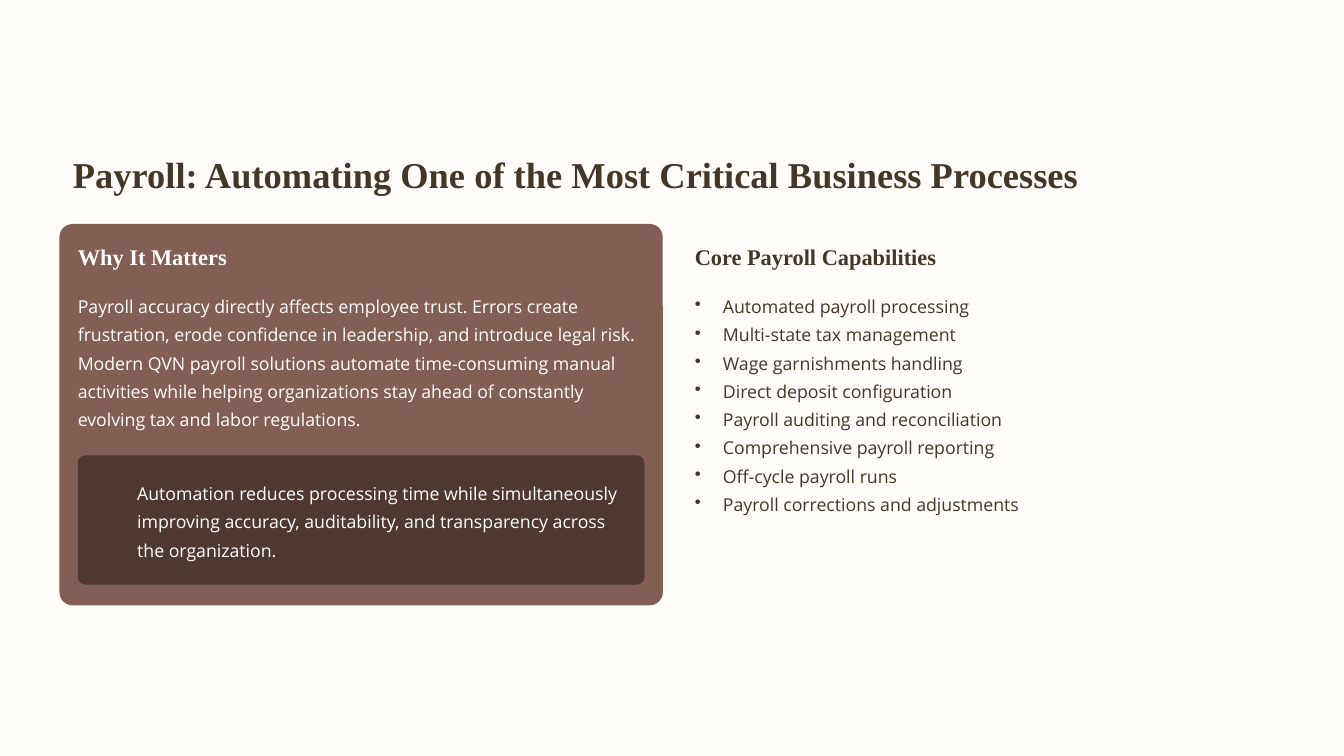
"""Build the payroll automation slide."""
import pptx
import pptx.dml.color
import pptx.enum.shapes
import pptx.enum.text
import pptx.oxml.ns
import pptx.util
from lxml import etree

Pt = pptx.util.Pt

TITLE = "Payroll: Automating One of the Most Critical Business Processes"
REASON_HEADING = "Why It Matters"
REASON = (
    "Payroll accuracy directly affects employee trust. Errors create frustration, "
    "erode confidence in leadership, and introduce legal risk. Modern QVN payroll "
    "solutions automate time-consuming manual activities while helping organizations "
    "stay ahead of constantly evolving tax and labor regulations."
)
CALLOUT = (
    "Automation reduces processing time while simultaneously improving accuracy, "
    "auditability, and transparency across the organization."
)
CAPABILITIES_HEADING = "Core Payroll Capabilities"
CAPABILITIES = [
    "Automated payroll processing",
    "Multi-state tax management",
    "Wage garnishments handling",
    "Direct deposit configuration",
    "Payroll auditing and reconciliation",
    "Comprehensive payroll reporting",
    "Off-cycle payroll runs",
    "Payroll corrections and adjustments",
]

THEME = {
    "background": "FFFCFA",
    "card": "835E54",
    "callout": "4E3832",
    "dark": "443728",
    "light": "FFFFFF",
    "title": {"name": "Times New Roman", "size": Pt(19.5), "bold": True},
    "heading": {"name": "Times New Roman", "size": Pt(12), "bold": True},
    "body": {"name": "Open Sans", "size": Pt(9.5), "bold": False},
    "spacing": {"title": 1.04, "heading": 1.04, "body": 1.33},
}

SLIDE_WIDTH, SLIDE_HEIGHT = 720, 405
CARD = (31.9, 120, 323.2, 204.3)
PADDING = 9.8
CALLOUT_INDENT = 31.8
CALLOUT_TOP, CALLOUT_HEIGHT = 243.9, 69.3
HEADING_TOP, HEADING_HEIGHT = 129.8, 15.2
BODY_TOP = 154.8
RIGHT_LEFT, RIGHT_WIDTH = 372.2, 309
BULLET_INDENT = 15.1


def rgb(name):
    return pptx.dml.color.RGBColor.from_string(THEME[name])


def place(shape, box):
    for side, length in zip(("left", "top", "width", "height"), box):
        setattr(shape, side, Pt(length))


def add_bullet(paragraph):
    properties = paragraph._p.get_or_add_pPr()
    properties.set("marL", str(Pt(BULLET_INDENT)))
    properties.set("indent", str(-Pt(BULLET_INDENT)))
    bullet = etree.SubElement(properties, pptx.oxml.ns.qn("a:buChar"))
    bullet.set("char", "•")


def write(shape, lines, style, color, bulleted=False):
    frame = shape.text_frame
    frame_format = {
        "margin_left": 0, "margin_top": 0, "margin_right": 0, "margin_bottom": 0,
        "word_wrap": True,
        "auto_size": pptx.enum.text.MSO_AUTO_SIZE.NONE,
        "vertical_anchor": pptx.enum.text.MSO_ANCHOR.TOP,
    }
    for name, value in frame_format.items():
        setattr(frame, name, value)
    for index, line in enumerate(lines):
        paragraph = frame.add_paragraph() if index else frame.paragraphs[0]
        paragraph.text = line
        paragraph.alignment = pptx.enum.text.PP_ALIGN.LEFT
        paragraph.line_spacing = THEME["spacing"][style]
        if bulleted:
            add_bullet(paragraph)
        for name, value in THEME[style].items():
            setattr(paragraph.font, name, value)
        paragraph.font.color.rgb = rgb(color)


def add_text(slide, box, *text_format, **options):
    shape = slide.shapes.add_textbox(*map(Pt, box))
    write(shape, *text_format, **options)


def add_panel(slide, box, color, rounding):
    kind = pptx.enum.shapes.MSO_SHAPE.ROUNDED_RECTANGLE
    shape = slide.shapes.add_shape(kind, *map(Pt, box))
    shape.adjustments[0] = rounding
    shape.shadow.inherit = False
    shape.fill.solid()
    shape.fill.fore_color.rgb = rgb(color)
    shape.line.fill.background()


def main():
    presentation = pptx.Presentation()
    presentation.slide_width = Pt(SLIDE_WIDTH)
    presentation.slide_height = Pt(SLIDE_HEIGHT)
    slide = presentation.slides.add_slide(presentation.slide_layouts.get_by_name("Title Only"))
    slide.background.fill.solid()
    slide.background.fill.fore_color.rgb = rgb("background")

    title = slide.shapes.title
    place(title, (39.1, 80.8, 641.5, 24.5))
    write(title, [TITLE], "title", "dark")

    left = CARD[0] + PADDING
    width = CARD[2] - 2 * PADDING
    add_panel(slide, CARD, "card", 0.034)
    add_text(slide, (left, HEADING_TOP, width, HEADING_HEIGHT),
             [REASON_HEADING], "heading", "light")
    add_text(slide, (left, BODY_TOP, width, 78.5), [REASON], "body", "light")

    add_panel(slide, (left, CALLOUT_TOP, width, CALLOUT_HEIGHT), "callout", 0.059)
    add_text(slide, (left + CALLOUT_INDENT, 255, width - CALLOUT_INDENT - PADDING, 47),
             [CALLOUT], "body", "light")

    add_text(slide, (RIGHT_LEFT, HEADING_TOP, RIGHT_WIDTH, HEADING_HEIGHT),
             [CAPABILITIES_HEADING], "heading", "dark")
    add_text(slide, (RIGHT_LEFT, BODY_TOP, RIGHT_WIDTH, 149),
             CAPABILITIES, "body", "dark", bulleted=True)
    presentation.save("out.pptx")


if __name__ == "__main__":
    main()
